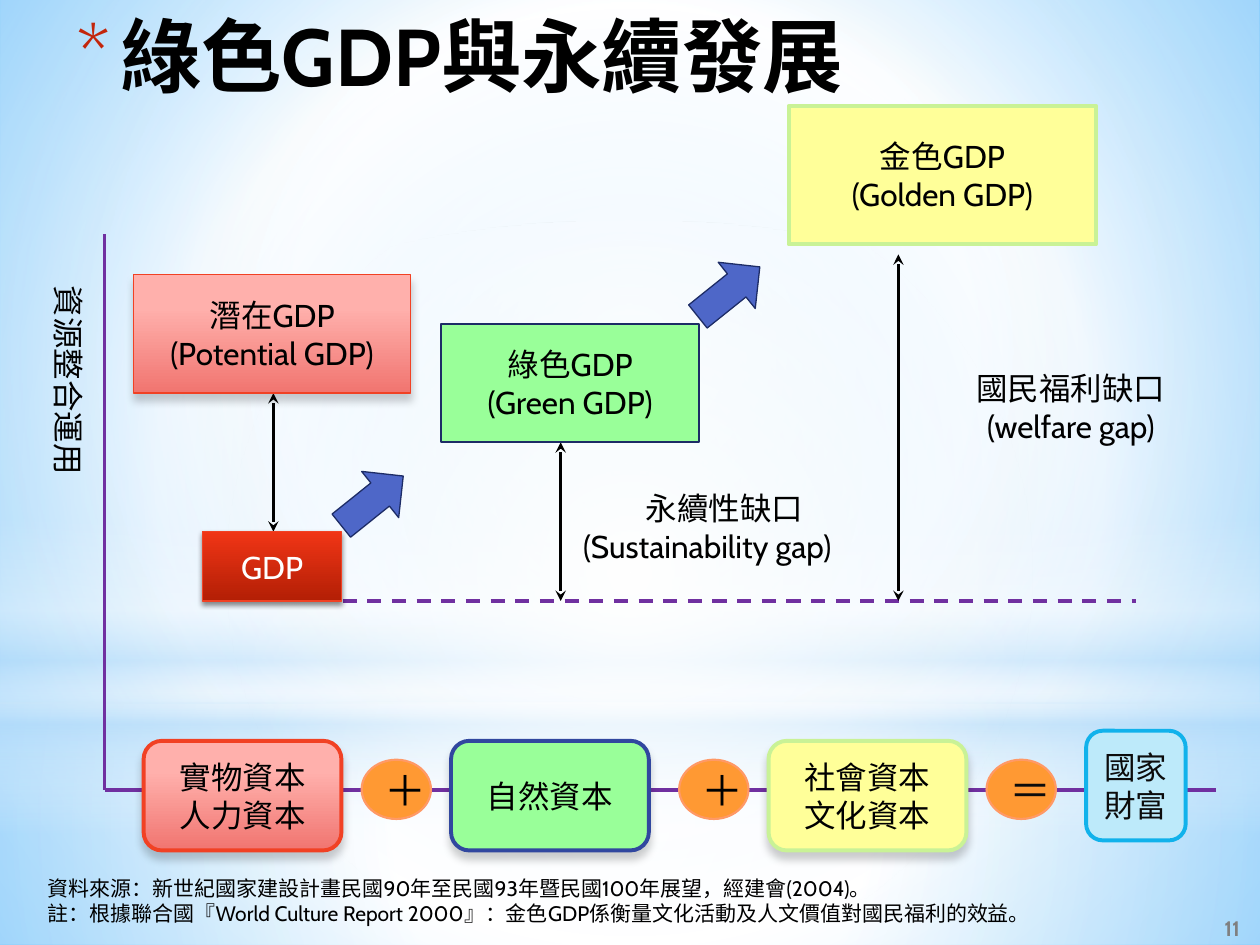
from lxml import etree
from pptx import Presentation
from pptx.dml.color import RGBColor
from pptx.enum.dml import MSO_LINE
from pptx.enum.shapes import MSO_CONNECTOR, MSO_SHAPE
from pptx.enum.text import MSO_ANCHOR, PP_ALIGN
from pptx.oxml.ns import qn
from pptx.util import Inches, Pt

RECTANGLE, ROUNDED = MSO_SHAPE.RECTANGLE, MSO_SHAPE.ROUNDED_RECTANGLE
OVAL, RIGHT_ARROW = MSO_SHAPE.OVAL, MSO_SHAPE.RIGHT_ARROW
STRAIGHT, DASH = MSO_CONNECTOR.STRAIGHT, MSO_LINE.DASH
LEFT, CENTER = PP_ALIGN.LEFT, PP_ALIGN.CENTER
TOP, MIDDLE = MSO_ANCHOR.TOP, MSO_ANCHOR.MIDDLE

FONT = "Cabin"
BLACK = RGBColor(0x00, 0x00, 0x00)
NEAR_BLACK = RGBColor(0x0C, 0x0C, 0x0C)
WHITE = RGBColor(0xFF, 0xFF, 0xFF)
GRAY = RGBColor(0x7F, 0x7F, 0x7F)
PURPLE = RGBColor(0x70, 0x30, 0xA0)
RED_LINE = RGBColor(0xF1, 0x41, 0x24)
BULLET_RED = RGBColor(0xC3, 0x26, 0x0C)
GREEN = RGBColor(0x99, 0xFF, 0x99)
NAVY = RGBColor(0x1D, 0x2C, 0x66)
BLUE_LINE = RGBColor(0x31, 0x47, 0x9F)
BLUE = RGBColor(0x4E, 0x67, 0xC8)
YELLOW = RGBColor(0xFF, 0xFF, 0x99)
LIME_LINE = RGBColor(0xC9, 0xF2, 0x96)
ORANGE = RGBColor(0xFF, 0x99, 0x33)
ORANGE_LINE = RGBColor(0xFF, 0x99, 0x66)
SKY = RGBColor(0xBD, 0xEA, 0xFA)
SKY_LINE = RGBColor(0x11, 0xB2, 0xEB)
PALE_BLUE = RGBColor(0xB4, 0xDC, 0xFA)
PINK = RGBColor(0xFF, 0xB0, 0xAC)
CORAL = RGBColor(0xF1, 0x75, 0x70)
BRIGHT_RED = RGBColor(0xF0, 0x35, 0x16)
DARK_RED = RGBColor(0xB3, 0x1F, 0x05)
BACKGROUND_EDGE = RGBColor(0x99, 0xD4, 0xFE)
BACKGROUND_DEEP = RGBColor(0x54, 0xBD, 0xFF)

PINK_STOPS = [(0, PINK, 100), (28, PINK, 100), (100, CORAL, 100)]
RED_STOPS = [(0, BRIGHT_RED, 100), (100, DARK_RED, 100)]
SOFT_SHADOW = (20, 5, 4)
TIGHT_SHADOW = (45, 3.1, 1.8)


def set_gradient(properties, stops, circular=False):
    solid = properties.find(qn("a:solidFill"))
    gradient = etree.Element(qn("a:gradFill"), rotWithShape="1")
    stop_list = etree.SubElement(gradient, qn("a:gsLst"))
    for position, color, opacity in stops:
        stop = etree.SubElement(stop_list, qn("a:gs"), pos=str(position * 1000))
        value = etree.SubElement(stop, qn("a:srgbClr"), val=str(color))
        etree.SubElement(value, qn("a:alpha"), val=str(opacity * 1000))
    if circular:
        path = etree.SubElement(gradient, qn("a:path"), path="circle")
        etree.SubElement(path, qn("a:fillToRect"), l="50000", t="50000", r="50000", b="50000")
    else:
        etree.SubElement(gradient, qn("a:lin"), ang="5400000", scaled="0")
    properties.replace(solid, gradient)


def write_text(shape, lines, size, color=BLACK, align=CENTER, anchor=MIDDLE, bold=False):
    text_frame = shape.text_frame
    text_frame.word_wrap = True
    text_frame.vertical_anchor = anchor
    text_frame.text = lines
    for paragraph in text_frame.paragraphs:
        paragraph.alignment = align
        for run in paragraph.runs:
            run.font.name = FONT
            run.font.size = Pt(size)
            run.font.bold = bold
            run.font.color.rgb = color


presentation = Presentation()
presentation.slide_width, presentation.slide_height = Inches(10), Inches(7.5)
slide = presentation.slides.add_slide(presentation.slide_layouts[5])
shapes = slide.shapes

slide.background.fill.solid()
set_gradient(slide.element.find(".//" + qn("p:bgPr")),
             [(0, BACKGROUND_EDGE, 100), (60, WHITE, 100), (100, BACKGROUND_DEEP, 100)], True)

panels = [
    (RECTANGLE, 5.58, 1.92, True, [(0, WHITE, 91), (37, WHITE, 76), (100, PALE_BLUE, 79)]),
    (RECTANGLE, 0, 5.58, True, [(0, WHITE, 89), (48, WHITE, 62), (100, PALE_BLUE, 79)]),
    (RECTANGLE, 4.12, 2.5, False, [(0, WHITE, 0), (29, WHITE, 30), (45, PALE_BLUE, 40),
                                   (55, WHITE, 26), (65, PALE_BLUE, 60), (100, WHITE, 0)]),
    (OVAL, 1.75, 5.58, True, [(0, WHITE, 100), (56, WHITE, 0), (100, WHITE, 0)]),
]
for kind, top, height, circular, stops in panels:
    panel = shapes.add_shape(kind, 0, Inches(top), Inches(10), Inches(height))
    panel.shadow.inherit = False
    panel.line.fill.background()
    panel.fill.solid()
    set_gradient(panel.element.spPr, stops, circular)

title = shapes.title
shapes.element.append(title.element)
title.left, title.top, title.width, title.height = Inches(0.51), 0, Inches(9), Inches(1.25)
write_text(title, "綠色GDP與永續發展", 46, BLACK, LEFT, TOP, True)
title_properties = title.text_frame.paragraphs[0]._p.get_or_add_pPr()
title_properties.set("marL", str(Inches(0.35)))
title_properties.set("indent", str(Inches(-0.41)))
bullet_color = etree.SubElement(title_properties, qn("a:buClr"))
etree.SubElement(bullet_color, qn("a:srgbClr"), val=str(BULLET_RED))
etree.SubElement(title_properties, qn("a:buFont"), typeface=FONT)
etree.SubElement(title_properties, qn("a:buChar"), char="*")

connectors = [
    (0.83, 6.27, 9.65, 6.27, PURPLE, False, False),
    (0.83, 1.86, 0.83, 6.27, PURPLE, False, False),
    (2.72, 4.77, 9.02, 4.77, PURPLE, True, False),
    (2.17, 3.12, 2.17, 4.22, BLACK, False, True),
    (4.45, 3.51, 4.45, 4.77, BLACK, False, True),
    (7.13, 2.02, 7.13, 4.77, BLACK, False, True),
]
for start_x, start_y, end_x, end_y, color, dashed, arrows in connectors:
    connector = shapes.add_connector(STRAIGHT, Inches(start_x), Inches(start_y),
                                     Inches(end_x), Inches(end_y))
    connector.line.color.rgb = color
    connector.line.width = Pt(2)
    if dashed:
        connector.line.dash_style = DASH
    properties = connector.element.spPr
    if arrows:
        for end in ("a:headEnd", "a:tailEnd"):
            etree.SubElement(properties.find(qn("a:ln")), qn(end), type="stealth")
    etree.SubElement(properties, qn("a:effectLst"))

labels = [
    (9.56, 7.23, 0.44, 0.27, 0, "11", 12, GRAY, CENTER, MIDDLE, True),
    (0.28, 6.9, 9.29, 0.5, 0,
     "資料來源：新世紀國家建設計畫民國90年至民國93年暨民國100年展望，經建會(2004)。\n"
     "註：根據聯合國『World Culture Report 2000』：金色GDP係衡量文化活動及人文價值對國民福利的效益。",
     12, BLACK, LEFT, TOP, False),
    (-0.8, 3.22, 2.6, 0.5, 90, "資源整合運用", 18, BLACK, LEFT, TOP, False),
    (4.53, 3.83, 2.44, 0.71, 0, "永續性缺口\n(Sustainability gap)", 18, BLACK, CENTER, TOP, False),
    (7.28, 2.88, 2.44, 0.71, 0, "國民福利缺口\n(welfare gap)", 18, BLACK, CENTER, TOP, False),
]
for left, top, width, height, rotation, lines, *text_format in labels:
    label = shapes.add_textbox(Inches(left), Inches(top), Inches(width), Inches(height))
    label.rotation = rotation
    write_text(label, lines, *text_format)
    if lines.startswith("永續性"):
        label.text_frame.paragraphs[1].alignment = LEFT

boxes = [
    (RECTANGLE, 1.06, 2.18, 2.2, 0.94, PINK_STOPS, RED_LINE, 0.75, SOFT_SHADOW,
     "潛在GDP\n(Potential GDP)", 18, BLACK),
    (RECTANGLE, 1.61, 4.22, 1.1, 0.55, RED_STOPS, RED_LINE, 0.75, TIGHT_SHADOW, "GDP", 18, WHITE),
    (RECTANGLE, 3.5, 2.57, 2.05, 0.94, GREEN, NAVY, 1.25, None, "綠色GDP\n(Green GDP)", 18, BLACK),
    (RECTANGLE, 6.26, 0.84, 2.44, 1.1, YELLOW, LIME_LINE, 2.25, None,
     "金色GDP\n(Golden GDP)", 18, BLACK),
    (ROUNDED, 8.62, 5.8, 0.79, 0.87, SKY, SKY_LINE, 2.25, None, "國家財富", 18, NEAR_BLACK),
]
for left, fill, line, lines in [
    (1.14, PINK_STOPS, RED_LINE, "實物資本\n人力資本"),
    (3.58, GREEN, BLUE_LINE, "自然資本"),
    (6.1, YELLOW, LIME_LINE, "社會資本\n文化資本"),
]:
    boxes.append((ROUNDED, left, 5.88, 1.57, 0.87, fill, line, 2.25, SOFT_SHADOW, lines, 18, BLACK))
for left, sign, color in [(2.87, "＋", BLACK), (5.39, "＋", BLACK), (7.83, "＝", NEAR_BLACK)]:
    boxes.append((OVAL, left, 6.03, 0.55, 0.47, ORANGE, ORANGE_LINE, 1.25, None, sign, 24, color))
for left, top in [(2.64, 3.74), (5.47, 2.08)]:
    boxes.append((RIGHT_ARROW, left, top, 0.63, 0.47, BLUE, NAVY, 0.75, None, "", 18, BLACK))

for kind, left, top, width, height, fill, line, weight, shadow, lines, size, color in boxes:
    box = shapes.add_shape(kind, Inches(left), Inches(top), Inches(width), Inches(height))
    box.shadow.inherit = False
    box.line.color.rgb = line
    box.line.width = Pt(weight)
    box.fill.solid()
    if isinstance(fill, list):
        set_gradient(box.element.spPr, fill)
    else:
        box.fill.fore_color.rgb = fill
    if kind == RIGHT_ARROW:
        box.rotation = 321.3
    if shadow:
        opacity, blur, distance = shadow
        effects = box.element.spPr.find(qn("a:effectLst"))
        outer = etree.SubElement(effects, qn("a:outerShdw"), blurRad=str(Pt(blur)),
                                 dist=str(Pt(distance)), dir="5400000", rotWithShape="0")
        value = etree.SubElement(outer, qn("a:srgbClr"), val=str(BLACK))
        etree.SubElement(value, qn("a:alpha"), val=str(opacity * 1000))
    if lines:
        write_text(box, lines, size, color)

presentation.save("out.pptx")
